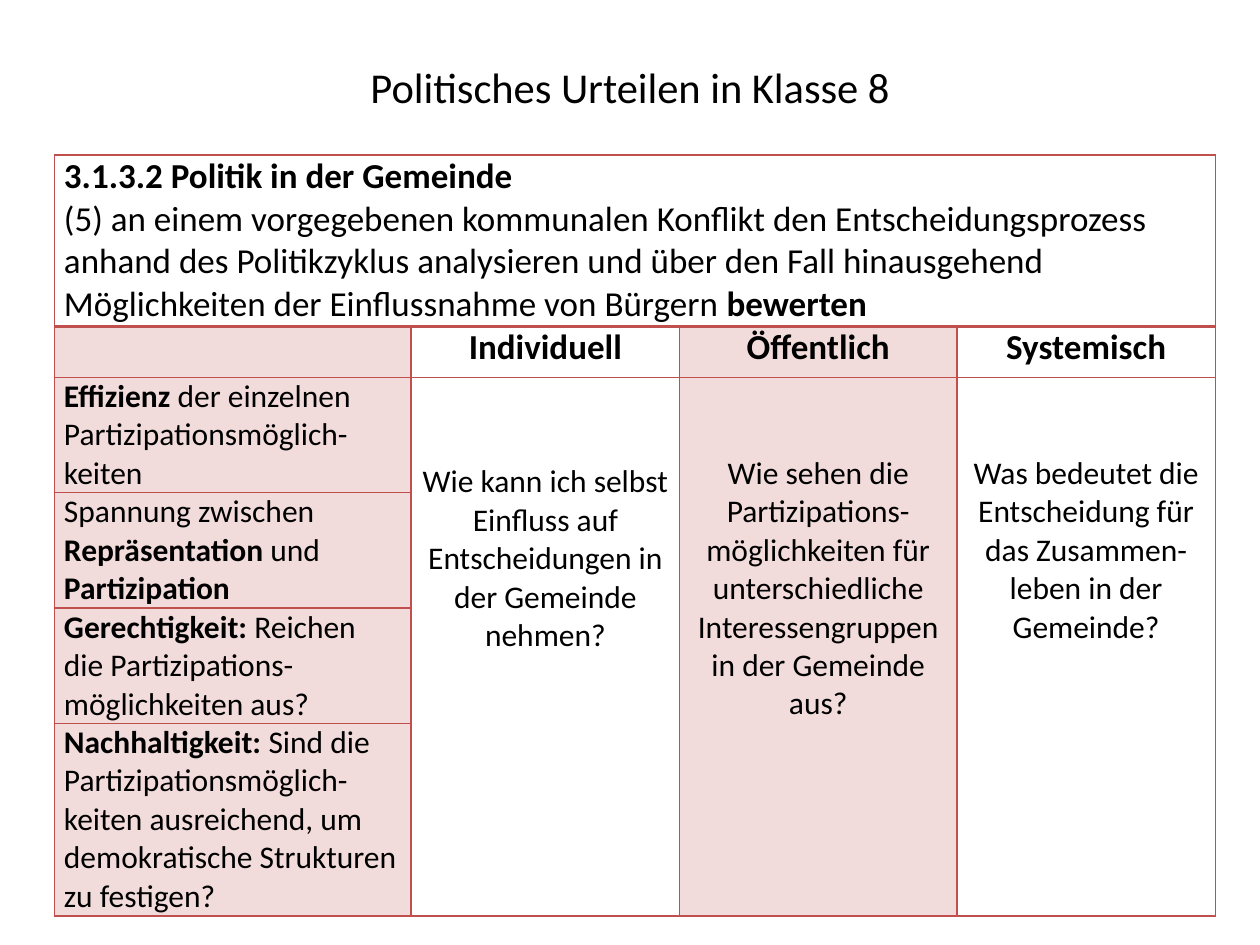
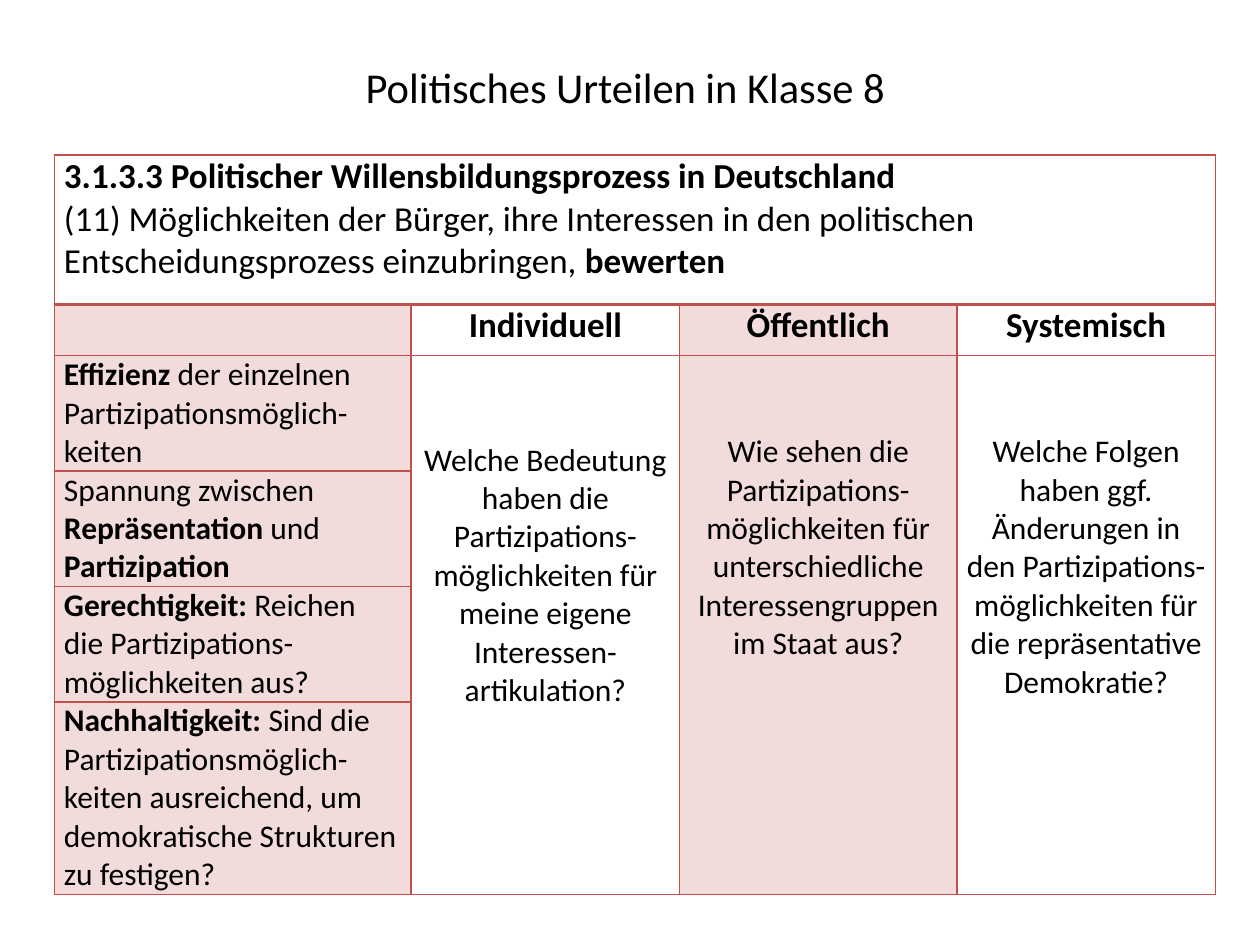
from lxml.etree import SubElement as Sub
from pptx import Presentation
from pptx.dml.color import RGBColor as RGB
from pptx.enum.text import MSO_ANCHOR as ANCHOR, PP_ALIGN as ALIGN
from pptx.oxml.ns import qn
from pptx.util import Cm, Pt

THEME = {
    "font": "Calibri",
    "ink": RGB(0x00, 0x00, 0x00),
    "white": RGB(0xFF, 0xFF, 0xFF),
    "tint": RGB(0xF2, 0xDC, 0xDB),
    "rule": "C0504D",
    "title": 24.3,
    "head": 20,
    "body": 18,
}

COLS = [7.19, 5.41, 5.59, 5.21]
ROWS = [1.03, 2.32, 2.32, 2.32, 3.88]
TOP_MARGINS = [1.72, 1.55, 1.55]
TINTED = (0, 2)
HEADS = ["Individuell", "Öffentlich", "Systemisch"]
CRITERIA = [
    "*Effizienz* der einzelnen Partizipationsmöglich-keiten",
    "Spannung zwischen *Repräsentation* und *Partizipation*",
    "*Gerechtigkeit:* Reichen die Partizipations-möglichkeiten aus?",
    "*Nachhaltigkeit:* Sind die Partizipationsmöglich-keiten ausreichend, "
    "um demokratische Strukturen zu festigen?",
]
SLIDES = [
    {
        "title": "Politisches Urteilen in Klasse 8",
        "top_row": 3.45,
        "standard": [
            "*3.1.3.2 Politik in der Gemeinde*",
            "(5) an einem vorgegebenen kommunalen Konflikt den Entscheidungsprozess "
            "anhand des Politikzyklus analysieren und über den Fall hinausgehend "
            "Möglichkeiten der Einflussnahme von Bürgern *bewerten*",
        ],
        "questions": [
            "Wie kann ich selbst Einfluss auf Entscheidungen in der Gemeinde nehmen?",
            "Wie sehen die Partizipations-möglichkeiten für unterschiedliche "
            "Interessengruppen in der Gemeinde aus?",
            "Was bedeutet die Entscheidung für das Zusammen-leben in der Gemeinde?",
        ],
    },
    {
        "title": "Politisches Urteilen in Klasse 8 ",
        "top_row": 3.02,
        "standard": [
            "*3.1.3.3 Politischer Willensbildungsprozess in Deutschland*",
            "(11) Möglichkeiten der Bürger, ihre Interessen in den politischen "
            "Entscheidungsprozess einzubringen, *bewerten*",
        ],
        "questions": [
            "Welche Bedeutung haben die Partizipations-möglichkeiten für meine "
            "eigene Interessen-artikulation?",
            "Wie sehen die Partizipations-möglichkeiten für unterschiedliche "
            "Interessengruppen im Staat aus?",
            "Welche Folgen haben ggf. Änderungen in den Partizipations-möglichkeiten "
            "für die repräsentative Demokratie?",
        ],
    },
]


def write(tf, lines, size, align=ALIGN.LEFT):
    for i, line in enumerate(lines):
        p = tf.add_paragraph() if i else tf.paragraphs[0]
        p.alignment = align
        for n, part in enumerate(line.split("*")):
            if part:
                r = p.add_run()
                r.text = part
                fmt = {"name": THEME["font"], "size": Pt(size), "bold": n % 2 == 1}
                for key, value in fmt.items():
                    setattr(r.font, key, value)
                r.font.color.rgb = THEME["ink"]


def border(cell, widths):
    tc_pr = cell._tc.get_or_add_tcPr()
    for side, width in zip("LRTB", widths):
        ln = Sub(tc_pr, qn(f"a:ln{side}"), w=str(Pt(width)))
        fill = Sub(ln, qn("a:solidFill"))
        Sub(fill, qn("a:srgbClr"), val=THEME["rule"])


prs = Presentation()
prs.slide_width, prs.slide_height = Cm(25.4), Cm(19.05)

for content in SLIDES:
    s = prs.slides.add_slide(prs.slide_layouts[5])

    title = s.shapes.title
    box = {"left": 1.9, "top": 1.12, "width": 21.6, "height": 2.8}
    for key, value in box.items():
        setattr(title, key, Cm(value))
    tf = title.text_frame
    fmt = {"word_wrap": True, "vertical_anchor": ANCHOR.TOP, "margin_top": Cm(0.1)}
    for key, value in fmt.items():
        setattr(tf, key, value)
    write(tf, [content["title"]], THEME["title"], ALIGN.CENTER)

    heights = [content["top_row"]] + ROWS
    frame = s.shapes.add_table(
        len(heights), len(COLS), Cm(1.1), Cm(3.12), Cm(sum(COLS)), Cm(sum(heights))
    )
    table = frame.table
    table.first_row = table.horz_banding = False
    for col, width in zip(table.columns, COLS):
        col.width = Cm(width)
    for row, height in zip(table.rows, heights):
        row.height = Cm(height)

    for i in range(len(heights)):
        for j in range(len(COLS)):
            cell = table.cell(i, j)
            border(cell, (1, 1, 2 if i == 1 else 1, 2 if i == 0 else 1))
            cell.fill.solid()
            tinted = i > 0 and j in TINTED
            cell.fill.fore_color.rgb = THEME["tint" if tinted else "white"]
            margins = {"left": 0.19, "right": 0.19, "top": 0, "bottom": 0}
            for side, value in margins.items():
                setattr(cell, f"margin_{side}", Cm(value))

    table.cell(0, 0).merge(table.cell(0, 3))
    write(table.cell(0, 0).text_frame, content["standard"], THEME["head"])

    for i, criterion in enumerate(CRITERIA, 2):
        write(table.cell(i, 0).text_frame, [criterion], THEME["body"])

    columns = zip(HEADS, content["questions"], TOP_MARGINS)
    for j, (head, question, margin) in enumerate(columns, 1):
        write(table.cell(1, j).text_frame, [f"*{head}*"], THEME["head"], ALIGN.CENTER)
        cell = table.cell(2, j)
        cell.merge(table.cell(5, j))
        cell.margin_top = Cm(margin)
        write(cell.text_frame, [question], THEME["body"], ALIGN.CENTER)

prs.save("out.pptx")
